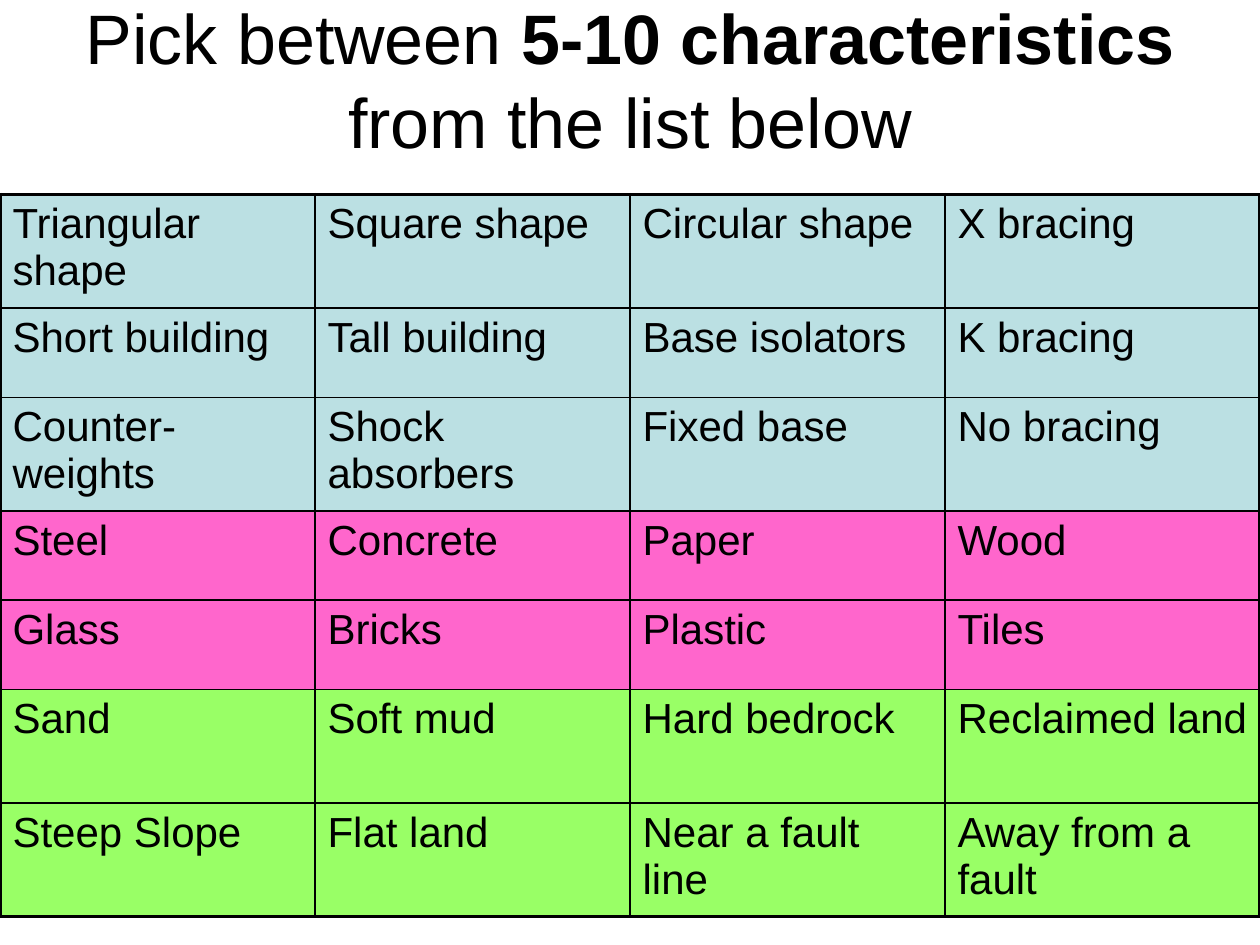
from pptx import Presentation
from pptx.dml.color import RGBColor
from pptx.enum.text import MSO_ANCHOR, MSO_AUTO_SIZE, PP_ALIGN
from pptx.oxml import parse_xml
from pptx.oxml.ns import nsdecls
from pptx.util import Cm, Pt

MIDDLE = MSO_ANCHOR.MIDDLE
FIXED = MSO_AUTO_SIZE.NONE
CENTER = PP_ALIGN.CENTER

THEME = {
    "font": "Arial", "title": Pt(40), "body": Pt(24),
    "ink": "000000", "shape": "BBE0E3", "stuff": "FF66CC", "ground": "99FF66",
    "thin": Pt(1), "thick": Pt(2.25),
}

# Each row: fill, height in cm, cell texts
ROWS = [
    ("shape", 2.29, ["Triangular shape", "Square shape", "Circular shape", "X bracing"]),
    ("shape", 1.8, ["Short building", "Tall building", "Base isolators", "K bracing"]),
    ("shape", 2.29, ["Counter-weights", "Shock absorbers", "Fixed base", "No bracing"]),
    ("stuff", 1.8, ["Steel", "Concrete", "Paper", "Wood"]),
    ("stuff", 1.8, ["Glass", "Bricks", "Plastic", "Tiles"]),
    ("ground", 2.29, ["Sand", "Soft mud", "Hard bedrock", "Reclaimed land"]),
    ("ground", 2.29, ["Steep Slope", "Flat land", "Near a fault line", "Away from a fault"]),
]
COLS = len(ROWS[0][2])


def add_run(par, text, size, bold=False):
    run = par.add_run()
    run.text = text
    look = {"name": THEME["font"], "size": THEME[size], "bold": bold}
    for key, value in look.items():
        setattr(run.font, key, value)
    run.font.color.rgb = RGBColor.from_string(THEME["ink"])


def add_edges(cell, outer):
    props = cell._tc.get_or_add_tcPr()
    for spot, (side, edge) in enumerate(outer.items()):
        width = THEME["thick" if edge else "thin"]
        props.insert(spot, parse_xml(
            f'<a:{side} {nsdecls("a")} w="{int(width)}"><a:solidFill>'
            f'<a:srgbClr val="{THEME["ink"]}"/></a:solidFill></a:{side}>'))


deck = Presentation()
deck.slide_width, deck.slide_height = Cm(25.4), Cm(19.05)
slide = deck.slides.add_slide(deck.slide_layouts[5])

# Title
title = slide.shapes.title
place = {"left": Cm(0), "top": Cm(0), "width": Cm(25.4), "height": Cm(3.18)}
for key, value in place.items():
    setattr(title, key, value)
frame = title.text_frame
for key, value in {"vertical_anchor": MIDDLE, "auto_size": FIXED, "word_wrap": True}.items():
    setattr(frame, key, value)
head = frame.paragraphs[0]
head.alignment = CENTER
add_run(head, "Pick between ", "title")
add_run(head, "5-10 characteristics ", "title", True)
add_run(head, "from the list below", "title")

# Table of characteristics
high = sum(row[1] for row in ROWS)
table = slide.shapes.add_table(len(ROWS), COLS, Cm(0), Cm(3.92), Cm(25.4), Cm(high)).table
table.first_row = table.horz_banding = False
for col in table.columns:
    col.width = Cm(25.4 / COLS)

for r, (fill, tall, texts) in enumerate(ROWS):
    table.rows[r].height = Cm(tall)
    for c, text in enumerate(texts):
        cell = table.cell(r, c)
        cell.fill.solid()
        cell.fill.fore_color.rgb = RGBColor.from_string(THEME[fill])
        add_edges(cell, {"lnL": c == 0, "lnR": c == COLS - 1,
                         "lnT": r == 0, "lnB": r == len(ROWS) - 1})
        add_run(cell.text_frame.paragraphs[0], text, "body")

deck.save("out.pptx")
